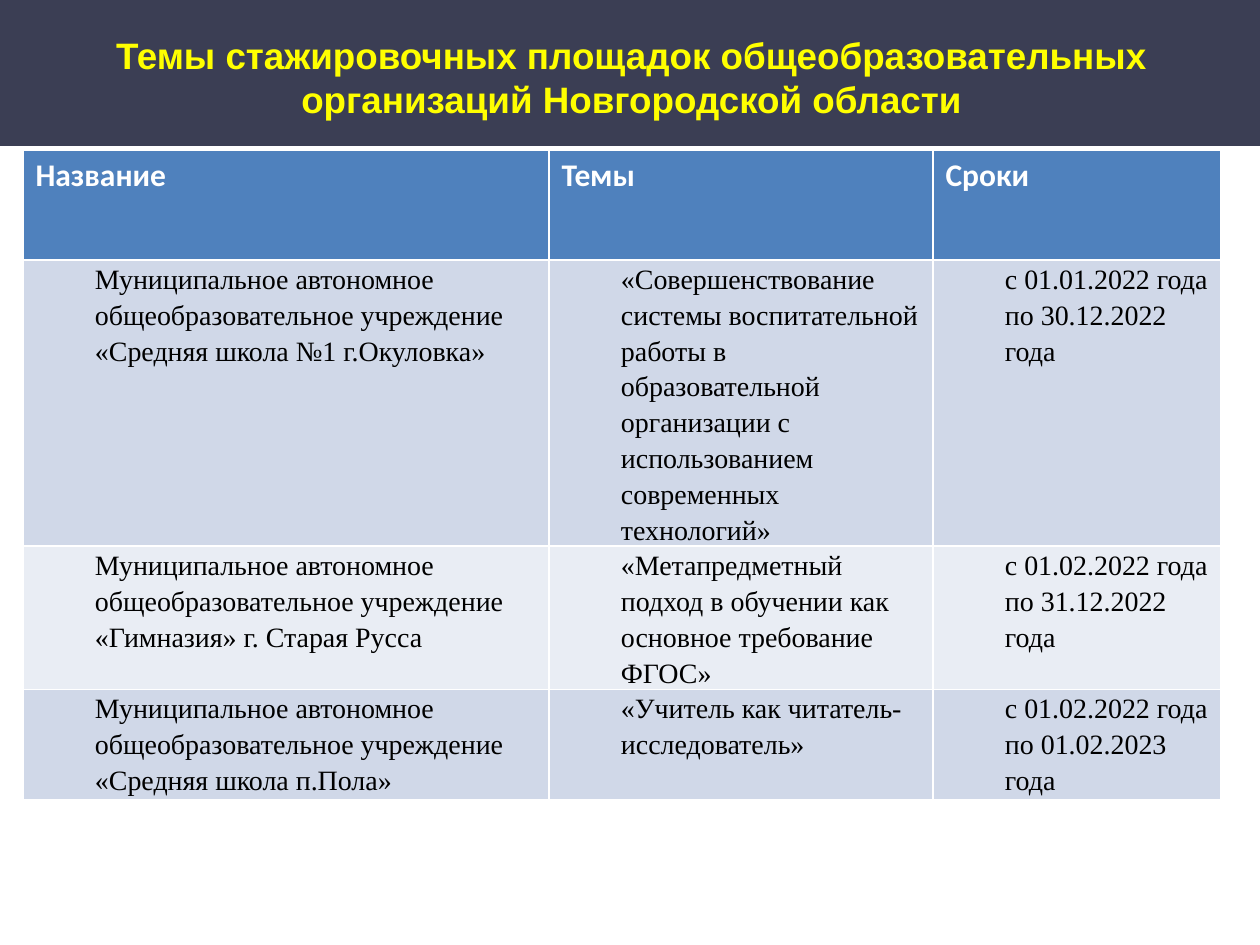
from pptx import Presentation
from pptx.dml.color import RGBColor
from pptx.enum.shapes import MSO_SHAPE
from pptx.enum.text import MSO_ANCHOR, PP_ALIGN
from pptx.util import Pt

PX = 914400 // 126
SLIDE_SIZE = (1260, 945)
BAND_BOX = (0, 0, 1260, 146)
TITLE_BOX = (16, 33, 1231, 134)
TABLE_LEFT_TOP = (23, 150)
COLUMN_WIDTHS = (526, 384, 288)
ROW_HEIGHT = 110
BODY_SIDE_MARGIN = 9
BODY_INDENT = 63

NAVY = RGBColor(0x3B, 0x3E, 0x54)
YELLOW = RGBColor(0xFF, 0xFF, 0x00)
WHITE = RGBColor(0xFF, 0xFF, 0xFF)
BLACK = RGBColor(0x00, 0x00, 0x00)
HEADER_BLUE = RGBColor(0x4F, 0x81, 0xBD)
BAND_FILLS = (RGBColor(0xD0, 0xD8, 0xE8), RGBColor(0xE9, 0xED, 0xF4))

TITLE_FONT = {"name": "Arial", "size": Pt(21), "bold": True}
HEADER_FONT = {"name": "Calibri", "size": Pt(18), "bold": True}
BODY_FONT = {"name": "Times New Roman", "size": Pt(16), "bold": False}

TITLE = "Темы стажировочных площадок общеобразовательных организаций Новгородской области"
HEADERS = ("Название", "Темы", "Сроки")
SCHOOL = "Муниципальное автономное общеобразовательное учреждение "
SITES = (
    (SCHOOL + "«Средняя школа №1 г.Окуловка»",
     "«Совершенствование системы воспитательной работы в образовательной "
     "организации с использованием современных технологий»",
     "с 01.01.2022 года по 30.12.2022 года"),
    (SCHOOL + "«Гимназия» г. Старая Русса",
     "«Метапредметный подход в обучении как основное требование ФГОС»",
     "с 01.02.2022 года по 31.12.2022 года"),
    (SCHOOL + "«Средняя школа п.Пола»",
     "«Учитель как читатель-исследователь»",
     "с 01.02.2022 года по 01.02.2023 года"),
)


def emu(*lengths):
    return [length * PX for length in lengths]


def set_attributes(target, values):
    for name, value in values.items():
        setattr(target, name, value)


def write_text(text_frame, text, font, color):
    paragraph = text_frame.paragraphs[0]
    run = paragraph.add_run()
    run.text = text
    set_attributes(run.font, font)
    run.font.color.rgb = color
    return paragraph


def add_band(slide, box):
    """Draw the dark strip and send it behind the title."""
    band = slide.shapes.add_shape(MSO_SHAPE.RECTANGLE, *emu(*box))
    band.shadow.inherit = False
    band.fill.solid()
    band.fill.fore_color.rgb = NAVY
    band.line.fill.background()
    slide.shapes.title.element.addprevious(band.element)


def place_title(slide, box):
    title = slide.shapes.title
    set_attributes(title, dict(zip(("left", "top", "width", "height"), emu(*box))))
    set_attributes(title.text_frame, {
        "margin_left": 0, "margin_top": 0, "margin_right": 0, "margin_bottom": 0,
        "word_wrap": True, "vertical_anchor": MSO_ANCHOR.TOP})
    paragraph = write_text(title.text_frame, TITLE, TITLE_FONT, YELLOW)
    paragraph.alignment = PP_ALIGN.CENTER


def fill_cell(cell, text, font, color, fill):
    cell.fill.solid()
    cell.fill.fore_color.rgb = fill
    return write_text(cell.text_frame, text, font, color)


def fill_body_cell(cell, text, fill):
    side = BODY_SIDE_MARGIN * PX
    set_attributes(cell, {"margin_left": side, "margin_right": side,
                          "margin_top": 0, "margin_bottom": 0})
    paragraph = fill_cell(cell, text, BODY_FONT, BLACK, fill)
    paragraph.line_spacing = 1.15
    properties = paragraph._p.get_or_add_pPr()
    properties.set("marL", str(BODY_INDENT * PX))
    properties.set("indent", "0")


def add_sites_table(slide, left, top):
    row_count = len(SITES) + 1
    box = (left, top, sum(COLUMN_WIDTHS), ROW_HEIGHT * row_count)
    table = slide.shapes.add_table(row_count, len(HEADERS), *emu(*box)).table
    for column, width in zip(table.columns, COLUMN_WIDTHS):
        column.width = width * PX
    for column, header in enumerate(HEADERS):
        fill_cell(table.cell(0, column), header, HEADER_FONT, WHITE, HEADER_BLUE)
    for row, site in enumerate(SITES):
        for column, text in enumerate(site):
            fill_body_cell(table.cell(row + 1, column), text, BAND_FILLS[row % 2])


def main():
    presentation = Presentation()
    presentation.slide_width, presentation.slide_height = emu(*SLIDE_SIZE)
    slide = presentation.slides.add_slide(presentation.slide_layouts[5])
    add_band(slide, BAND_BOX)
    place_title(slide, TITLE_BOX)
    add_sites_table(slide, *TABLE_LEFT_TOP)
    presentation.save("out.pptx")


if __name__ == "__main__":
    main()
